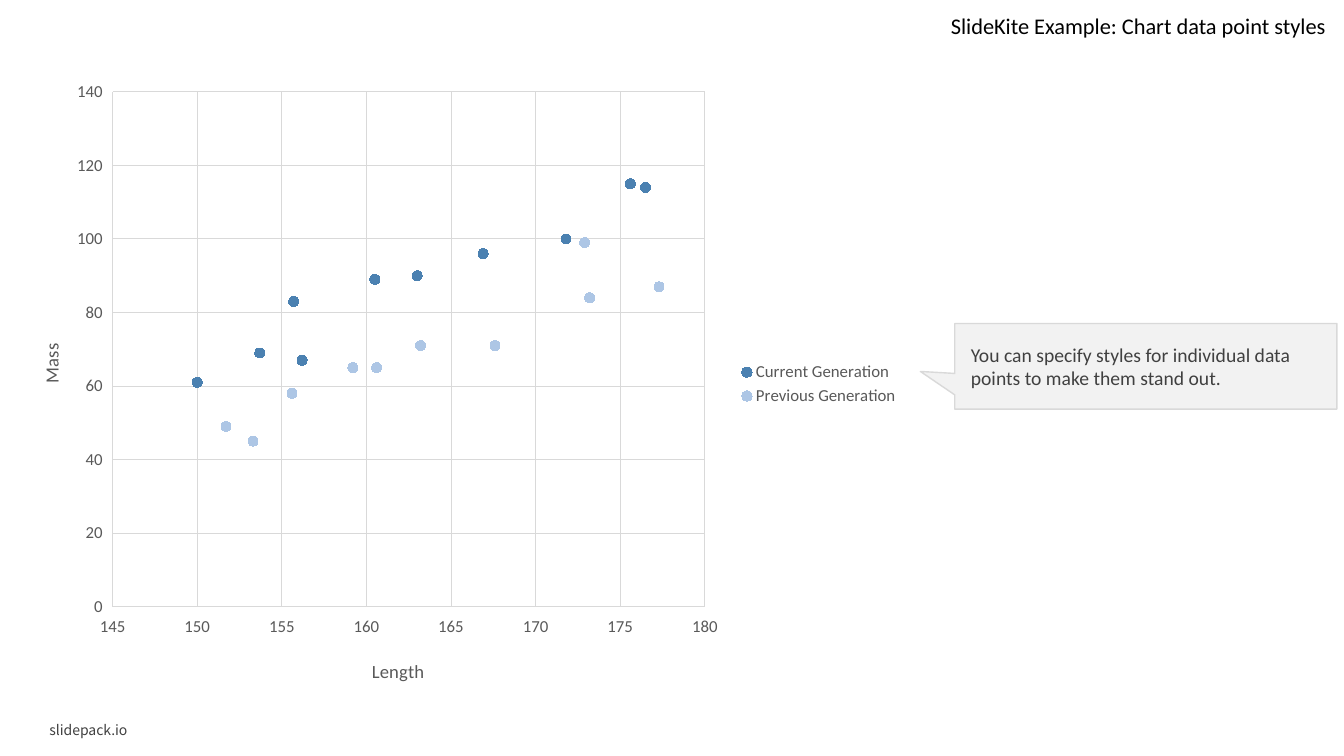
"""Build a slide with a two-series scatter chart, a callout, a title and a footer."""
from lxml.etree import SubElement
from pptx import Presentation
from pptx.chart.data import XyChartData
from pptx.dml.color import RGBColor
from pptx.enum.chart import XL_CHART_TYPE as ChartType, XL_LEGEND_POSITION as LegendSide
from pptx.enum.chart import XL_MARKER_STYLE as Marker, XL_TICK_MARK as Tick
from pptx.enum.shapes import MSO_SHAPE as Shape
from pptx.enum.text import MSO_ANCHOR as Anchor, MSO_AUTO_SIZE as AutoSize, PP_ALIGN as Align
from pptx.oxml.ns import qn
from pptx.util import Inches, Pt

COLORS = {"ink": "000000", "text": "404040", "axis": "595959", "grid": "D9D9D9",
          "panel": "F2F2F2", "current": "4B81B1", "previous": "ADC6E5"}

GENERATIONS = {
    "Current Generation": ("current", [
        (150, 61), (156.2, 67), (153.7, 69), (155.7, 83), (160.5, 89),
        (163, 90), (171.8, 100), (166.9, 96), (175.6, 115), (176.5, 114)]),
    "Previous Generation": ("previous", [
        (153.3, 45), (155.6, 58), (151.7, 49), (159.2, 65), (163.2, 71),
        (160.6, 65), (167.6, 71), (173.2, 84), (177.3, 87), (172.9, 99)]),
}


def rgb(color):
    return RGBColor.from_string(COLORS[color])


def style_font(font, size, color, face="Calibri"):
    font.size, font.name, font.bold = Pt(size), face, False
    font.color.rgb = rgb(color)


def write(frame, text, size, color, face="Calibri", align=Align.LEFT,
          anchor=Anchor.MIDDLE, wrap=True):
    frame.word_wrap, frame.vertical_anchor = wrap, anchor
    paragraph = frame.paragraphs[0]
    paragraph.alignment = align
    run = paragraph.add_run()
    run.text = text
    style_font(run.font, size, color, face)


def place_in_chart(element, index, **shares):
    for old_layout in element.findall(qn("c:layout")):
        element.remove(old_layout)
    layout = element.makeelement(qn("c:layout"), {})
    element.insert(index, layout)
    manual = SubElement(layout, qn("c:manualLayout"))
    if "w" in shares:
        SubElement(manual, qn("c:layoutTarget"), val="inner")
    for side in "xy":
        SubElement(manual, qn(f"c:{side}Mode"), val="edge")
    for side, share in shares.items():
        SubElement(manual, qn(f"c:{side}"), val=str(share))


class Deck:
    def __init__(self):
        self.presentation = Presentation()
        self.presentation.slide_width = Inches(13.33)
        self.presentation.slide_height = Inches(7.5)
        self.slide = self.presentation.slides.add_slide(self.presentation.slide_layouts[5])

    def area(self, left, top, width, height):
        across, down = self.presentation.slide_width, self.presentation.slide_height
        return [int(share * side / 100) for share, side in
                zip((left, top, width, height), (across, down, across, down))]

    def title(self, text, *shares):
        heading = self.slide.shapes.title
        heading.left, heading.top, heading.width, heading.height = self.area(*shares)
        write(heading.text_frame, text, 16, "ink", align=Align.RIGHT,
              anchor=Anchor.TOP, wrap=False)
        heading.text_frame.auto_size = AutoSize.SHAPE_TO_FIT_TEXT

    def footer(self, text, *shares):
        site = self.slide.shapes.add_textbox(*self.area(*shares))
        write(site.text_frame, text, 10, "text", face="Noto Sans CJK JP")

    def callout(self, text, pointer, *shares):
        hint = self.slide.shapes.add_shape(Shape.RECTANGULAR_CALLOUT, *self.area(*shares))
        hint.shadow.inherit = False
        hint.adjustments[0], hint.adjustments[1] = pointer
        hint.fill.solid()
        hint.fill.fore_color.rgb = rgb("panel")
        hint.line.color.rgb, hint.line.width = rgb("grid"), Pt(1)
        frame = hint.text_frame
        frame.margin_left = frame.margin_right = Inches(0.16)
        frame.margin_top = frame.margin_bottom = Inches(0.16)
        write(frame, text, 14, "text")

    def axis(self, axis, name, low, high, step, x, y, rotation):
        axis.minimum_scale, axis.maximum_scale, axis.major_unit = low, high, step
        axis.major_tick_mark, axis.minor_tick_mark = Tick.OUTSIDE, Tick.NONE
        axis.has_major_gridlines = True
        gridline = axis.major_gridlines.format.line
        gridline.color.rgb, gridline.width = rgb("grid"), Pt(0.75)
        axis.format.line.fill.background()
        style_font(axis.tick_labels.font, 12, "axis")
        axis.tick_labels.number_format = "General"
        axis.tick_labels.number_format_is_linked = False
        label = axis.axis_title
        write(label.text_frame, name, 13.3, "axis", align=Align.CENTER)
        label._element.find(".//" + qn("a:bodyPr")).set("rot", str(rotation * 60000))
        place_in_chart(label._element, 1, x=x, y=y)

    def scatter(self, generations, *shares):
        points = XyChartData()
        for name, (_, pairs) in generations.items():
            series = points.add_series(name)
            for length, mass in pairs:
                series.add_data_point(length, mass)
        chart = self.slide.shapes.add_chart(
            ChartType.XY_SCATTER, *self.area(*shares), points).chart
        style_font(chart.font, 10, "ink")
        chart.has_title = False
        chart.plots[0].vary_by_categories = False
        for series, (color, _) in zip(chart.plots[0].series, generations.values()):
            series.smooth = False
            series.format.line.fill.background()
            series.marker.style, series.marker.size = Marker.CIRCLE, 7
            series.marker.format.fill.solid()
            series.marker.format.fill.fore_color.rgb = rgb(color)
            series.marker.format.line.color.rgb = rgb(color)
        self.axis(chart.category_axis, "Length", 145, 180, 5, 0.4, 0.93, 0)
        self.axis(chart.value_axis, "Mass", 0, 140, 20, 0.03, 0.43, -90)
        place_in_chart(chart._chartSpace.find(".//" + qn("c:plotArea")), 0,
                       x=0.116, y=0.037, w=0.657, h=0.816)
        chart.has_legend = True
        chart.legend.position = LegendSide.RIGHT
        chart.legend.include_in_layout = False
        style_font(chart.legend.font, 12, "axis")


def main():
    deck = Deck()
    deck.footer("slidepack.io", 2.93, 94.93, 21.83, 3.33)
    deck.scatter(GENERATIONS, 0.6, 9.07, 67.07, 83.47)
    deck.callout("You can specify styles for individual data points to make them stand out.",
                 (-0.59, 0.06), 71.04, 42.8, 28.43, 11.33)
    deck.title("SlideKite Example: Chart data point styles", 69.24, 0.93, 30.16, 4.93)
    deck.presentation.save("out.pptx")


if __name__ == "__main__":
    main()
